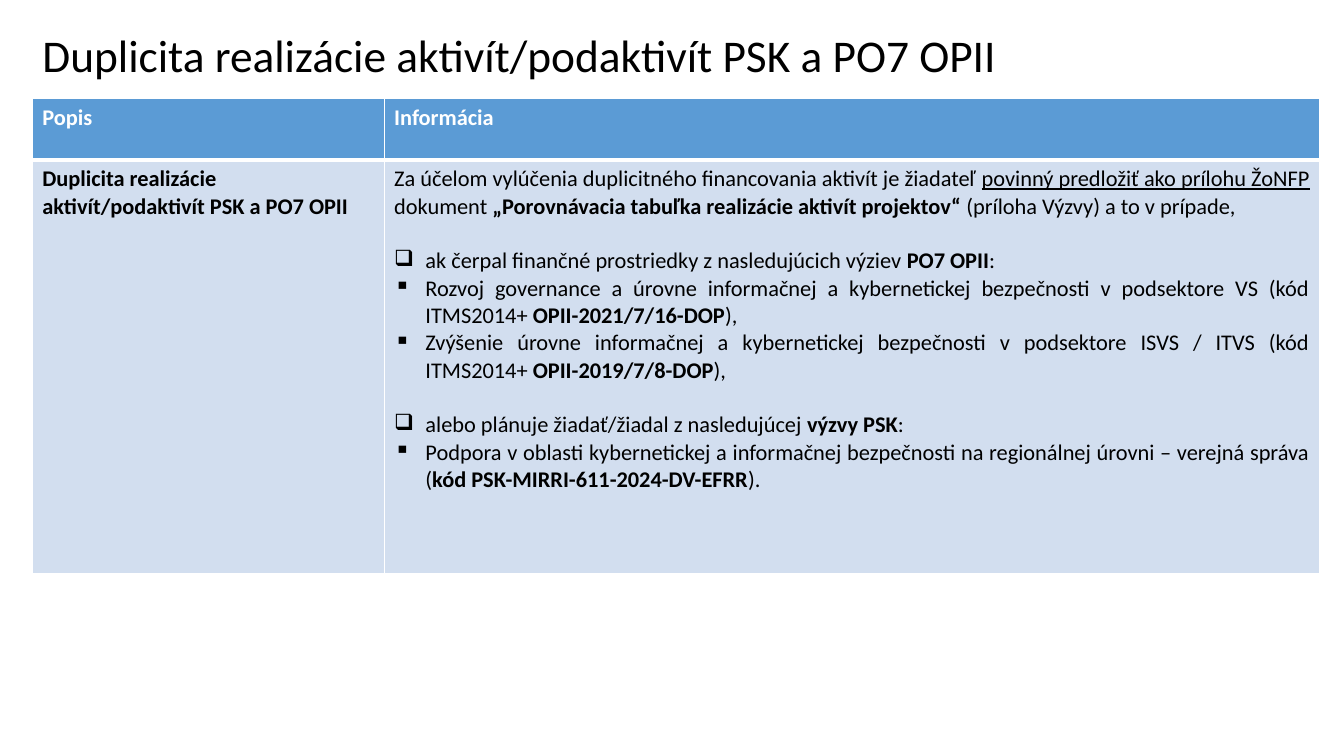
import pptx
import pptx.util
import pptx.dml.color
import pptx.enum.text
import pptx.oxml
import pptx.oxml.ns

Inches = pptx.util.Inches
Pt = pptx.util.Pt
ALIGN = pptx.enum.text.PP_ALIGN
ANCHOR = pptx.enum.text.MSO_ANCHOR

HUES = {"head": "5B9BD5", "body": "D2DEEF", "ink": "000000", "white": "FFFFFF"}
BOLD = {"bold": True}
LINE = {"underline": True}
PLAIN = {}

# Each paragraph: bullet sign, space before in points, runs
INFO = [
    ("", 0, [
        ("Za účelom vylúčenia duplicitného financovania aktivít je žiadateľ ", PLAIN),
        ("povinný predložiť ako prílohu ŽoNFP", LINE),
        (" dokument ", PLAIN),
        ("„Porovnávacia tabuľka realizácie aktivít projektov“ ", BOLD),
        ("(príloha Výzvy) a to v prípade, ", PLAIN)]),
    ("❑", 19.5, [
        ("ak čerpal finančné prostriedky z nasledujúcich výziev", PLAIN),
        (" PO7 OPII", BOLD), (": ", PLAIN)]),
    ("▪", 0, [
        ("Rozvoj governance a úrovne informačnej a kybernetickej bezpečnosti "
         "v podsektore VS (kód ITMS2014+ ", PLAIN),
        ("OPII-2021/7/16-DOP", BOLD), ("),", PLAIN)]),
    ("▪", 0, [
        ("Zvýšenie úrovne informačnej a kybernetickej bezpečnosti "
         "v podsektore ISVS / ITVS (kód ITMS2014+ ", PLAIN),
        ("OPII-2019/7/8-DOP", BOLD), ("),", PLAIN)]),
    ("❑", 19.5, [
        ("alebo plánuje žiadať/žiadal z nasledujúcej ", PLAIN),
        ("výzvy PSK", BOLD), (":", PLAIN)]),
    ("▪", 0, [
        ("Podpora v oblasti kybernetickej a informačnej bezpečnosti "
         "na regionálnej úrovni – verejná správa (", PLAIN),
        ("kód PSK-MIRRI-611-2024-DV-EFRR", BOLD), (").", PLAIN)]),
]
TOPIC = "Duplicita realizácie aktivít/podaktivít PSK a PO7 OPII"


class Deck:
    def __init__(self, wide, high):
        self.show = pptx.Presentation()
        self.show.slide_width = Inches(wide)
        self.show.slide_height = Inches(high)
        self.slide = self.show.slides.add_slide(self.show.slide_layouts[5])
        self.font = {"name": "Calibri", "size": Pt(16), "bold": False}

    def apply(self, item, form):
        for key, val in form.items():
            setattr(item, key, val)

    def text(self, para, runs, hue, **form):
        for words, style in runs:
            run = para.add_run()
            run.text = words
            self.apply(run.font, {**self.font, **form, **style})
            run.font.color.rgb = pptx.dml.color.RGBColor.from_string(HUES[hue])

    def title(self, words, left, top, wide, high):
        shape = self.slide.shapes.title
        self.apply(shape, {"left": Inches(left), "top": Inches(top),
                           "width": Inches(wide), "height": Inches(high)})
        frame = shape.text_frame
        self.apply(frame, {"word_wrap": True, "vertical_anchor": ANCHOR.MIDDLE,
                           "auto_size": pptx.enum.text.MSO_AUTO_SIZE.NONE})
        para = frame.paragraphs[0]
        self.apply(para, {"alignment": ALIGN.LEFT, "line_spacing": 0.9})
        self.text(para, [(words, PLAIN)], "ink", size=Pt(32.4))

    def table(self, left, top, cols, rows):
        grid = self.slide.shapes.add_table(
            len(rows), len(cols), Inches(left), Inches(top),
            Inches(sum(cols)), Inches(sum(rows))).table
        for col, wide in zip(grid.columns, cols):
            col.width = Inches(wide)
        for row, high in zip(grid.rows, rows):
            row.height = Inches(high)
        return grid

    def cell(self, cell, paras, fill, ink, align=ALIGN.LEFT, base=1):
        cell.fill.solid()
        cell.fill.fore_color.rgb = pptx.dml.color.RGBColor.from_string(HUES[fill])
        self.edge(cell, base)
        frame = cell.text_frame
        for spot, (sign, gap, runs) in enumerate(paras):
            para = frame.add_paragraph() if spot else frame.paragraphs[0]
            self.apply(para, {"alignment": align, "space_before": Pt(gap)})
            if sign:
                self.mark(para, sign)
            self.text(para, runs, ink)

    def edge(self, cell, base):
        # Borders come before the fill in the cell properties
        props = cell._tc.get_or_add_tcPr()
        for spot, side in enumerate("LRTB"):
            size = Pt(base if side == "B" else 1)
            props.insert(spot, pptx.oxml.parse_xml(
                f'<a:ln{side} {pptx.oxml.ns.nsdecls("a")} w="{size}"><a:solidFill>'
                f'<a:srgbClr val="{HUES["white"]}"/></a:solidFill></a:ln{side}>'))

    def mark(self, para, sign):
        props = para._p.get_or_add_pPr()
        dent = Inches(0.31)
        props.set("marL", str(dent))
        props.set("indent", str(-dent))
        props.append(pptx.oxml.parse_xml(
            f'<a:buChar {pptx.oxml.ns.nsdecls("a")} char="{sign}"/>'))


def main():
    deck = Deck(13.33, 7.5)

    # Title
    deck.title(TOPIC, 0.32, 0.32, 12.63, 0.51)

    # Table with header row
    grid = deck.table(0.32, 0.98, [3.49, 9.28], [0.61, 4.1])
    for col, name in enumerate(["Popis", "Informácia"]):
        deck.cell(grid.cell(0, col), [("", 0, [(name, BOLD)])], "head", "white", base=3)

    # Body row
    deck.cell(grid.cell(1, 0), [("", 0, [(TOPIC, BOLD)])], "body", "ink")
    deck.cell(grid.cell(1, 1), INFO, "body", "ink", ALIGN.JUSTIFY)

    deck.show.save("out.pptx")


if __name__ == "__main__":
    main()
